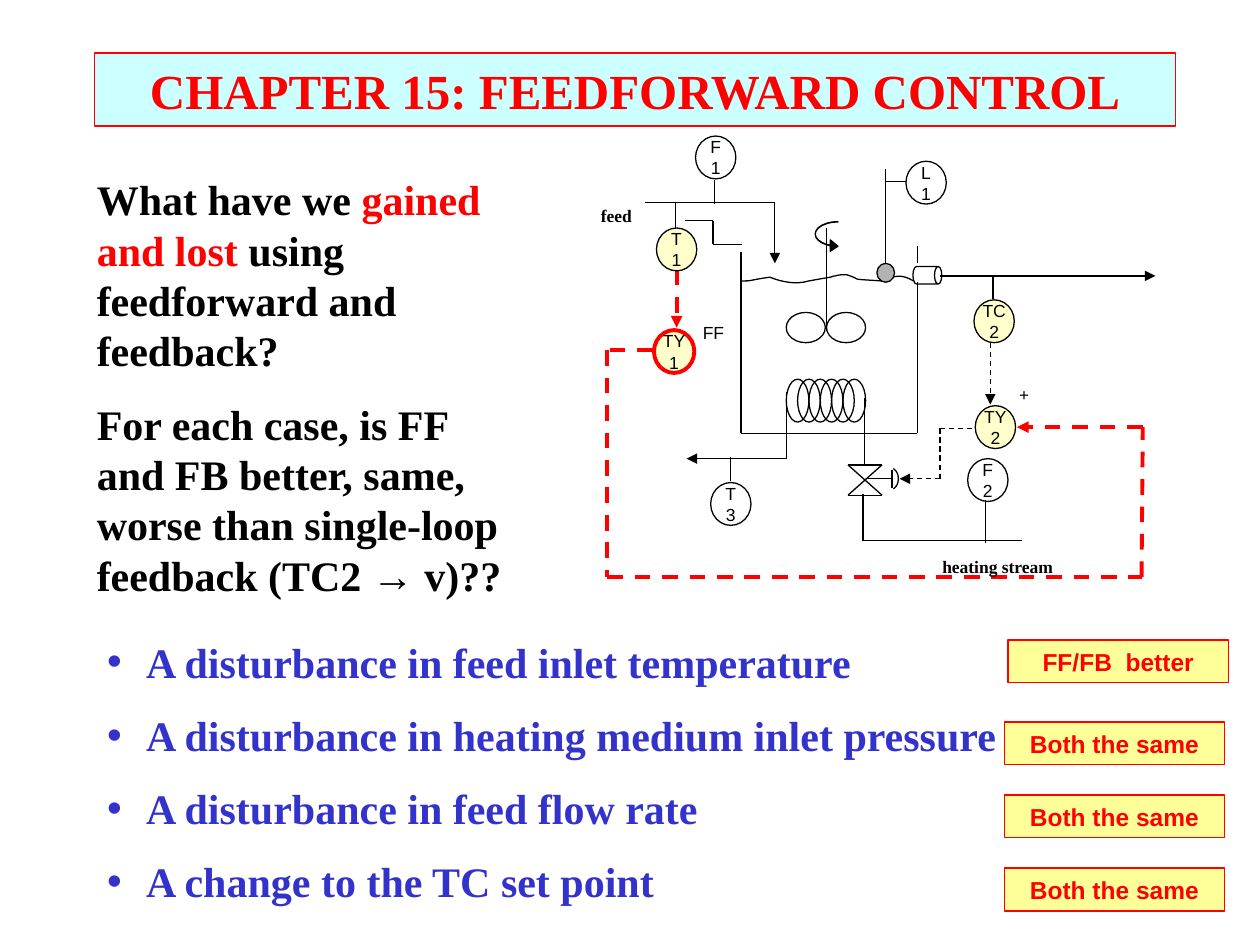
import lxml.etree
import pptx
import pptx.dml.color
import pptx.enum.dml
import pptx.enum.shapes
import pptx.enum.text
import pptx.oxml.ns
import pptx.util

Inches = pptx.util.Inches
SHAPES = pptx.enum.shapes.MSO_SHAPE
CENTER = pptx.enum.text.PP_ALIGN.CENTER
MIDDLE = pptx.enum.text.MSO_ANCHOR.MIDDLE
NO_AUTOFIT = pptx.enum.text.MSO_AUTO_SIZE.NONE

COLORS = {
    "black": "000000", "red": "FF0000", "blue": "3333CC", "title": "CCFFFF",
    "bubble": "FFFFCC", "answer": "FFFF99", "float": "B2B2B2",
}
FONTS = {
    "title": {"name": "Times New Roman", "size": pptx.util.Pt(28), "bold": True},
    "body": {"name": "Times New Roman", "size": pptx.util.Pt(24), "bold": True},
    "stream": {"name": "Times New Roman", "size": pptx.util.Pt(10), "bold": True},
    "tag": {"name": "Arial", "size": pptx.util.Pt(10), "bold": False},
    "answer": {"name": "Arial", "size": pptx.util.Pt(14), "bold": True},
}
PIPE = {"color": "black", "width": 0.75, "dash": False}
SIGNAL = {"color": "black", "width": 0.75, "dash": True}
FEEDFORWARD = {"color": "red", "width": 2.25, "dash": True}
FEEDFORWARD_RIM = {"color": "red", "width": 2.25, "dash": False}


def rgb(name):
    """Return the named colour."""
    return pptx.dml.color.RGBColor.from_string(COLORS[name])


def paint(shape, fill=None, style=PIPE):
    """Give a shape its fill and outline."""
    if fill:
        shape.fill.solid()
        shape.fill.fore_color.rgb = rgb(fill)
    else:
        shape.fill.background()
    draw_line(shape, style)


def draw_line(shape, style, arrow=False):
    """Set a line's colour, width, dash and optional end arrow."""
    line = shape.line
    line.color.rgb = rgb(style["color"])
    line.width = pptx.util.Pt(style["width"])
    if style["dash"]:
        line.dash_style = pptx.enum.dml.MSO_LINE.DASH
    if arrow:
        outline = shape._element.spPr.find(pptx.oxml.ns.qn("a:ln"))
        lxml.etree.SubElement(outline, pptx.oxml.ns.qn("a:tailEnd"), type="triangle")


def write(frame, paragraphs, font, alignment=None, space=0, wrap=True):
    """Fill a text frame with paragraphs made of (text, colour) runs."""
    for name, value in {"auto_size": NO_AUTOFIT, "word_wrap": wrap}.items():
        setattr(frame, name, value)
    for index, runs in enumerate(paragraphs):
        paragraph = frame.add_paragraph() if index else frame.paragraphs[0]
        paragraph.alignment = alignment
        paragraph.space_before = pptx.util.Pt(space)
        for text, color in runs:
            run = paragraph.add_run()
            run.text = text
            for name, value in FONTS[font].items():
                setattr(run.font, name, value)
            run.font.color.rgb = rgb(color)


def place(shape, box):
    """Move a placeholder to a box."""
    for name, value in zip(("left", "top", "width", "height"), box):
        setattr(shape, name, Inches(value))


def add_title(slide, box):
    """Add the framed chapter title."""
    title = slide.shapes.title
    place(title, box)
    paint(title, "title", FEEDFORWARD | {"width": 0.75, "dash": False})
    title.text_frame.vertical_anchor = MIDDLE
    write(title.text_frame, [[("CHAPTER 15: FEEDFORWARD CONTROL", "red")]], "title", CENTER)


def add_question(slide, box):
    """Add the two opening questions."""
    question = slide.shapes.add_textbox(*map(Inches, box))
    write(question.text_frame, [
        [("What have we ", "black"), ("gained and lost", "red"),
         (" using feedforward and feedback?", "black")],
        [("For each case, is FF and FB better, same, worse than "
          "single-loop feedback (TC2 → v)??", "black")],
    ], "body", space=13)


def add_cases(slide, box):
    """Add the bulleted list of cases."""
    cases = slide.placeholders[1]
    place(cases, box)
    write(cases.text_frame, [[(text, "blue")] for text in (
        "A disturbance in feed inlet temperature",
        "A disturbance in heating medium inlet pressure",
        "A disturbance in feed flow rate",
        "A change to the TC set point",
    )], "body", space=13)
    for paragraph in cases.text_frame.paragraphs:
        properties = paragraph._p.get_or_add_pPr()
        properties.set("marL", str(Inches(0.31)))
        properties.set("indent", str(-Inches(0.31)))


def add_answer(slide, box, text):
    """Add one framed answer."""
    answer = slide.shapes.add_shape(SHAPES.RECTANGLE, *map(Inches, box))
    answer.shadow.inherit = False
    paint(answer, "answer", FEEDFORWARD | {"width": 0.75, "dash": False})
    write(answer.text_frame, [[(text, "red")]], "answer", CENTER)


def add_part(group, origin, kind, box, fill=None, style=PIPE):
    """Add a preset shape at an offset from the origin."""
    left, top, width, height = box
    part = group.shapes.add_shape(
        kind, *map(Inches, (origin[0] + left, origin[1] + top, width, height)))
    part.shadow.inherit = False
    paint(part, fill, style)
    return part


def add_route(group, origin, points, style=PIPE, arrow=False):
    """Join points with straight lines, with an optional arrow at the end."""
    spots = [(Inches(origin[0] + x), Inches(origin[1] + y)) for x, y in points]
    for index, (start, end) in enumerate(zip(spots, spots[1:])):
        connector = group.shapes.add_connector(
            pptx.enum.shapes.MSO_CONNECTOR.STRAIGHT, *start, *end)
        draw_line(connector, style, arrow and index == len(spots) - 2)
        lxml.etree.SubElement(connector._element.spPr, pptx.oxml.ns.qn("a:effectLst"))


def add_curve(group, origin, start, segments, steps=8):
    """Draw a smooth open outline through cubic segments."""
    points = [start]
    for first, second, end in segments:
        knots = (points[-1], first, second, end)
        for step in range(1, steps + 1):
            t = step / steps
            weights = ((1 - t) ** 3, 3 * t * (1 - t) ** 2, 3 * t * t * (1 - t), t ** 3)
            points.append(tuple(sum(w * k[axis] for w, k in zip(weights, knots))
                                for axis in (0, 1)))
    spots = [(Inches(origin[0] + x), Inches(origin[1] + y)) for x, y in points]
    builder = group.shapes.build_freeform(*spots[0], scale=1.0)
    builder.add_line_segments(spots[1:], close=False)
    curve = builder.convert_to_shape()
    curve.shadow.inherit = False
    paint(curve)


def add_bubble(group, origin, left, top, tag, number, fill=None, style=PIPE):
    """Add an instrument bubble with its tag and number."""
    bubble = add_part(group, origin, SHAPES.OVAL, (left, top, 0.32, 0.34), fill, style)
    bubble.text_frame.vertical_anchor = MIDDLE
    write(bubble.text_frame, [[(tag, "black")], [(number, "black")]], "tag", CENTER, wrap=False)


def add_vessel(group, origin):
    """Draw the stirred tank with its coil, liquid, overflow and level float."""
    for index in range(6):
        add_part(group, origin, SHAPES.OVAL, (1.64 + 0.09 * index, 2.01, 0.18, 0.34))
    add_route(group, origin, [(1.28, 1), (1.28, 2.44), (2.68, 2.44), (2.68, 1.24)])
    add_route(group, origin, [(2.68, 1.09), (2.68, 0.95)])
    outlet = add_part(group, origin, SHAPES.CAN, (2.69, 1.07, 0.14, 0.23))
    outlet.rotation = 90
    outlet.adjustments[0] = 0.417
    add_route(group, origin, [(1.96, 0.81), (1.96, 1.63)])
    for left in (1.64, 1.96):
        add_part(group, origin, SHAPES.OVAL, (left, 1.48, 0.31, 0.24))
    add_curve(group, origin, (2.65, 1.23), [
        ((2.55, 1.17), (2.5, 1.19), (2.4, 1.23)), ((2.11, 1.21), (2.27, 1.23), (2.12, 1.18)),
        ((2.09, 1.18), (2.06, 1.18), (2.03, 1.19)), ((2.01, 1.19), (2, 1.2), (1.99, 1.2)),
        ((1.93, 1.21), (1.82, 1.23), (1.82, 1.23)), ((1.72, 1.26), (1.61, 1.24), (1.51, 1.2)),
        ((1.31, 1.23), (1.38, 1.23), (1.28, 1.23))])
    spin = add_part(group, origin, SHAPES.CURVED_RIGHT_ARROW, (1.87, 0.76, 0.18, 0.24), "black")
    for index, value in enumerate((0.015, 0.502, 0.333)):
        spin.adjustments[index] = value
    add_part(group, origin, SHAPES.OVAL, (2.36, 1.09, 0.14, 0.15), "float")


def add_process(slide, box):
    """Draw the process with its instruments and control signals in the box."""
    origin = box[:2]
    group = slide.shapes.add_group_shape()
    add_vessel(group, origin)
    for points in (
        [(2.26, 2.16), (2.26, 2.69)], [(1.64, 2.11), (1.64, 2.64)],
        [(2.4, 2.69), (2.13, 2.69), (2.4, 2.93), (2.13, 2.93), (2.4, 2.69)],
        [(2.27, 2.8), (2.48, 2.8)], [(2.48, 2.73), (2.48, 2.87)],
        [(2.25, 2.92), (2.25, 3.29), (3.51, 3.29)], [(3.28, 1.37), (3.28, 1.18)],
        [(3.22, 2.97), (3.22, 3.31)], [(0.76, 0.81), (0.76, 0.6)],
        [(1.07, 0.43), (1.07, 0.62)], [(1.2, 2.82), (1.2, 2.63)],
        [(2.43, 1.09), (2.43, 0.34)], [(2.59, 0.44), (2.43, 0.44)],
        [(0.84, 0.75), (1.06, 0.75), (1.06, 0.94), (1.29, 0.94)],
    ):
        add_route(group, origin, points)
    add_curve(group, origin, (2.49, 2.72), [
        ((2.51, 2.73), (2.53, 2.76), (2.53, 2.8)), ((2.53, 2.84), (2.51, 2.87), (2.49, 2.88))])
    for points, style in (
        ([(0.52, 0.61), (1.55, 0.61), (1.55, 1.09)], PIPE),
        ([(2.86, 1.19), (4.57, 1.19)], PIPE),
        ([(1.64, 2.64), (0.85, 2.64)], PIPE),
        ([(3.26, 1.72), (3.26, 2.21)], SIGNAL),
        ([(3.26, 2.4), (2.86, 2.4), (2.86, 2.8), (2.54, 2.8)], SIGNAL),
        ([(0.77, 1.14), (0.77, 1.6)], FEEDFORWARD),
        ([(0.58, 1.78), (0.22, 1.78), (0.22, 3.58), (4.46, 3.58), (4.47, 2.39), (3.47, 2.39)],
         FEEDFORWARD),
    ):
        add_route(group, origin, points, style, arrow=True)
    for left, top, tag, number, fill in (
        (3.13, 1.38, "TC", "2", "bubble"), (0.61, 0.81, "T", "1", "bubble"),
        (0.92, 0.08, "F", "1", None), (3.08, 2.64, "F", "2", None),
        (1.04, 2.83, "T", "3", None), (2.59, 0.28, "L", "1", None),
        (3.14, 2.22, "TY", "2", "bubble"),
    ):
        add_bubble(group, origin, left, top, tag, number, fill)
    add_bubble(group, origin, 0.59, 1.62, "TY", "1", "bubble", FEEDFORWARD_RIM)
    for left, top, width, text, font in (
        (0.07, 0.58, 0.45, "feed", "stream"), (2.78, 3.36, 1.09, "heating stream", "stream"),
        (3.39, 2, 0.25, "+", "stream"), (0.88, 1.51, 0.37, "FF", "tag"),
    ):
        label = group.shapes.add_textbox(
            *map(Inches, (origin[0] + left, origin[1] + top, width, 0.27)))
        write(label.text_frame, [[(text, "black")]], font, wrap=False)


def main():
    """Build and save the slide."""
    presentation = pptx.Presentation()
    presentation.slide_width, presentation.slide_height = Inches(10), Inches(7.5)
    slide = presentation.slides.add_slide(presentation.slide_layouts[1])
    add_title(slide, (0.75, 0.42, 8.58, 0.58))
    add_question(slide, (0.67, 1.33, 3.5, 3.49))
    add_cases(slide, (0.75, 5, 7.92, 2.3))
    add_process(slide, (4.6, 1, 4.6, 3.7))
    add_answer(slide, (8, 5.08, 1.75, 0.34), "FF/FB  better")
    for row in range(3):
        add_answer(slide, (7.97, 5.73 + 0.58 * row, 1.75, 0.34), "Both the same")
    presentation.save("out.pptx")


if __name__ == "__main__":
    main()
